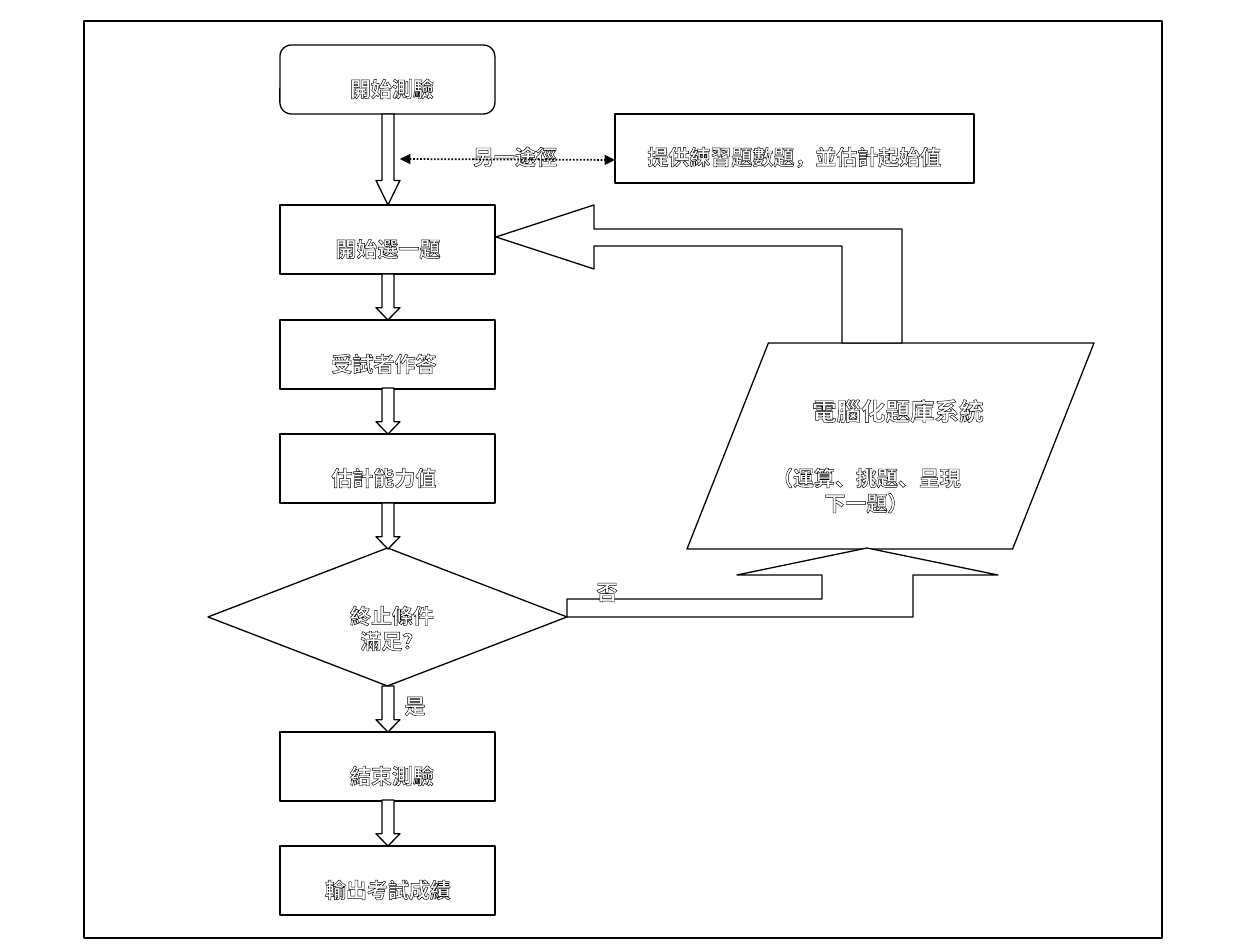
from dataclasses import dataclass

from lxml import etree
from pptx import Presentation
from pptx.dml.color import RGBColor
from pptx.enum.dml import MSO_LINE
from pptx.enum.shapes import MSO_CONNECTOR, MSO_SHAPE
from pptx.enum.text import MSO_ANCHOR, PP_ALIGN
from pptx.oxml.ns import qn
from pptx.util import Emu, Pt

RECTANGLE = MSO_SHAPE.RECTANGLE
PROCESS = MSO_SHAPE.FLOWCHART_PROCESS
TERMINAL = MSO_SHAPE.FLOWCHART_ALTERNATE_PROCESS
DECISION = MSO_SHAPE.FLOWCHART_DECISION
DATA = MSO_SHAPE.FLOWCHART_DATA
DOWN_ARROW = MSO_SHAPE.DOWN_ARROW
STRAIGHT = MSO_CONNECTOR.STRAIGHT
DOTTED = MSO_LINE.ROUND_DOT
TOP = MSO_ANCHOR.TOP
CENTER = PP_ALIGN.CENTER

EMU_PER_PX = 914400 / 126
FONT = "Noto Sans CJK SC"
COLORS = {"paper": "FFFFFF", "ink": "000000"}
OUTLINE_PT = 0.75
LINE_FACTOR = 1.2
LABEL_INSET = 8

STEP_LEFT, STEP_WIDTH, STEP_HEIGHT = 280, 215, 69
ARROW_WIDTH = 24
ARROW_LEFT = 376


@dataclass(frozen=True)
class Node:
    kind: int
    left: int
    top: int
    width: int
    height: int


@dataclass(frozen=True)
class Arrow:
    top: int
    height: int
    head: float = 0.51


@dataclass(frozen=True)
class Label:
    lines: tuple[str, ...]
    left: int
    top: int
    width: int
    height: int = 30
    size: int = 12


def step(top: int, kind: int = PROCESS) -> Node:
    return Node(kind, STEP_LEFT, top, STEP_WIDTH, STEP_HEIGHT)


FRAME = Node(RECTANGLE, 84, 21, 1078, 917)
NODES = [
    step(45, TERMINAL),
    *(step(top) for top in (205, 320, 434, 732, 846)),
    Node(DECISION, 208, 548, 359, 138),
    Node(DATA, 687, 343, 407, 206),
    Node(PROCESS, 615, 114, 359, 69),
]
ARROWS = [
    Arrow(114, 91, 1.02),
    *(Arrow(top, 46) for top in (274, 388, 503, 686, 800)),
]
BENT_ARROWS = [
    [(867, 548), (737, 575), (822, 575), (822, 599), (567, 599),
     (567, 617), (913, 617), (913, 575), (998, 575)],
    [(496, 237), (594, 269), (594, 246), (842, 246), (842, 343),
     (902, 343), (902, 229), (594, 229), (594, 205)],
]
LABELS = [
    Label(("開始測驗",), 328, 68, 128),
    Label(("開始選一題",), 304, 228, 168),
    Label(("受試者作答",), 304, 343, 160),
    Label(("估計能力值",), 304, 457, 160),
    Label(("終止條件", "滿足？"), 328, 595, 128, 60),
    Label(("結束測驗",), 328, 755, 128),
    Label(("輸出考試成績",), 304, 869, 168),
    Label(("電腦化題庫系統",), 758, 388, 280, 36, 14),
    Label(("（運算、挑題、呈現", "下一題）"), 735, 457, 263, 69),
    Label(("否",), 591, 571, 32),
    Label(("是",), 399, 685, 32),
    Label(("提供練習題數題，並估計起始值",), 639, 136, 311),
    Label(("另一途徑",), 467, 136, 96, 23),
]


def px(length: float) -> Emu:
    return Emu(round(length * EMU_PER_PX))


def color(name: str) -> RGBColor:
    return RGBColor.from_string(COLORS[name])


def paint(shape, filled: bool = True) -> None:
    shape.shadow.inherit = False
    if filled:
        shape.fill.solid()
        shape.fill.fore_color.rgb = color("paper")
    else:
        shape.fill.background()
    shape.line.color.rgb = color("ink")
    shape.line.width = Pt(OUTLINE_PT)


def draw_node(page, node: Node, filled: bool = True):
    box = page.shapes.add_shape(
        node.kind, px(node.left), px(node.top), px(node.width), px(node.height))
    paint(box, filled)
    return box


def draw_arrow(page, arrow: Arrow) -> None:
    shape = draw_node(
        page, Node(DOWN_ARROW, ARROW_LEFT, arrow.top, ARROW_WIDTH, arrow.height))
    shape.adjustments[0] = 0.5
    shape.adjustments[1] = arrow.head


def draw_bent_arrow(page, points: list[tuple[int, int]]) -> None:
    builder = page.shapes.build_freeform(*points[0], scale=EMU_PER_PX)
    builder.add_line_segments(points[1:], close=True)
    paint(builder.convert_to_shape())


def outline_text(span) -> None:
    properties = span._r.get_or_add_rPr()
    line = etree.SubElement(properties, qn("a:ln"), w=str(Pt(OUTLINE_PT)))
    fill = etree.SubElement(line, qn("a:solidFill"))
    etree.SubElement(fill, qn("a:srgbClr"), val=COLORS["ink"])
    etree.SubElement(properties, qn("a:ea"), typeface=FONT)


def draw_label(page, label: Label) -> None:
    box = page.shapes.add_textbox(
        px(label.left), px(label.top), px(label.width), px(label.height))
    frame = box.text_frame
    frame.word_wrap = False
    frame.vertical_anchor = TOP
    frame.margin_left = frame.margin_right = frame.margin_bottom = 0
    frame.margin_top = px(LABEL_INSET)
    for index, line in enumerate(label.lines):
        para = frame.add_paragraph() if index else frame.paragraphs[0]
        para.alignment = CENTER
        para.line_spacing = Pt(label.size * LINE_FACTOR)
        para.font.name = FONT
        para.font.size = Pt(label.size)
        para.font.bold = True
        para.font.color.rgb = color("paper")
        span = para.add_run()
        span.text = line
        outline_text(span)


def draw_alternative_route(page) -> None:
    route = page.shapes.add_connector(
        STRAIGHT, px(400), px(159), px(615), px(160))
    route.line.color.rgb = color("ink")
    route.line.width = Pt(1)
    route.line.dash_style = DOTTED
    line = route.line._get_or_add_ln()
    for end in ("a:headEnd", "a:tailEnd"):
        etree.SubElement(line, qn(end), type="triangle")
    etree.SubElement(route._element.spPr, qn("a:effectLst"))


def main() -> None:
    deck = Presentation()
    deck.slide_width, deck.slide_height = px(1260), px(945)
    page = deck.slides.add_slide(deck.slide_layouts[6])
    draw_node(page, FRAME, filled=False)
    for node in NODES:
        draw_node(page, node)
    for arrow in ARROWS:
        draw_arrow(page, arrow)
    for points in BENT_ARROWS:
        draw_bent_arrow(page, points)
    for label in LABELS:
        draw_label(page, label)
    draw_alternative_route(page)
    deck.save("out.pptx")


if __name__ == "__main__":
    main()
